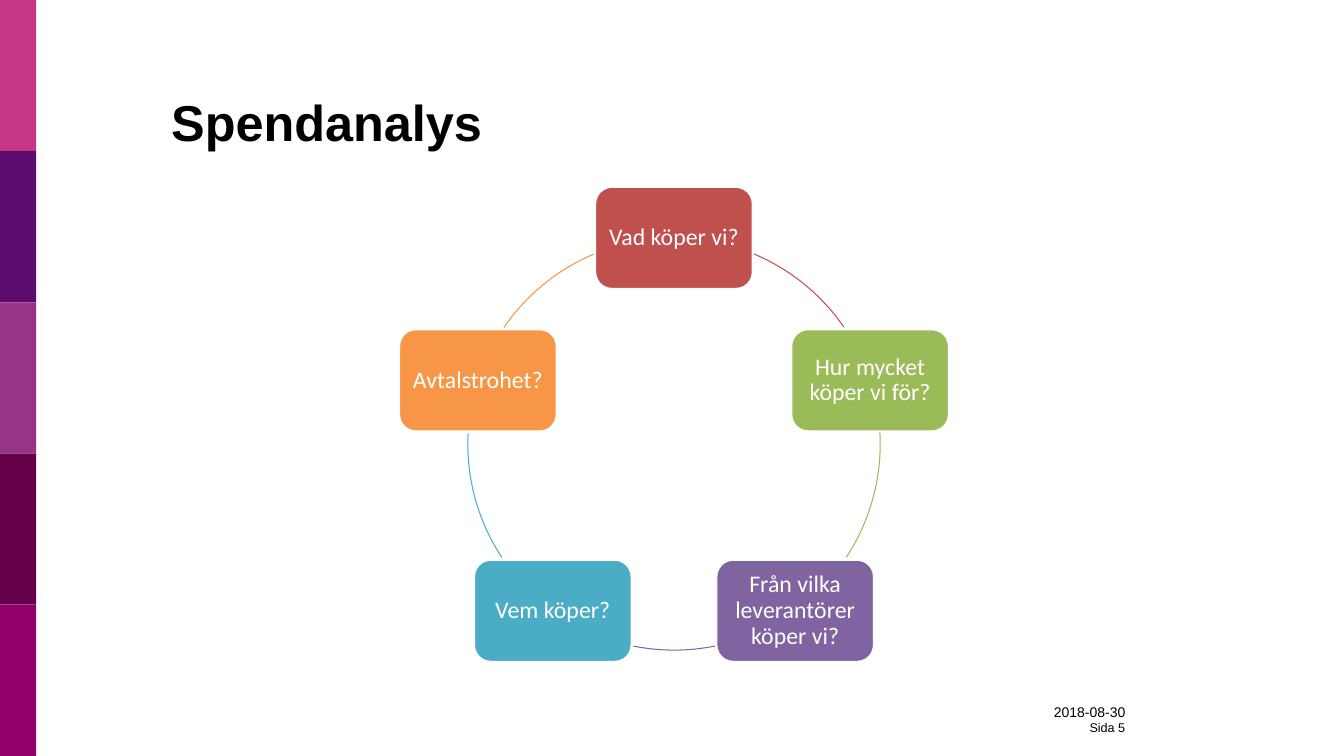
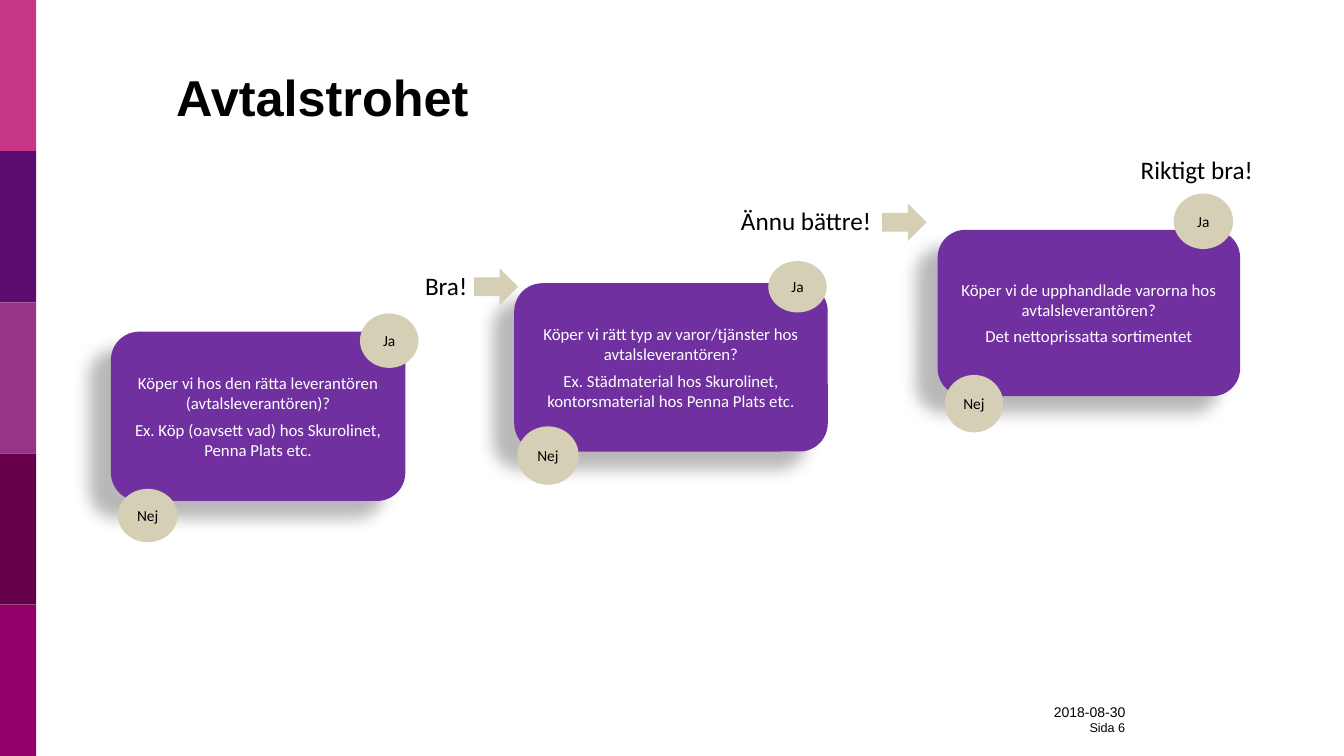
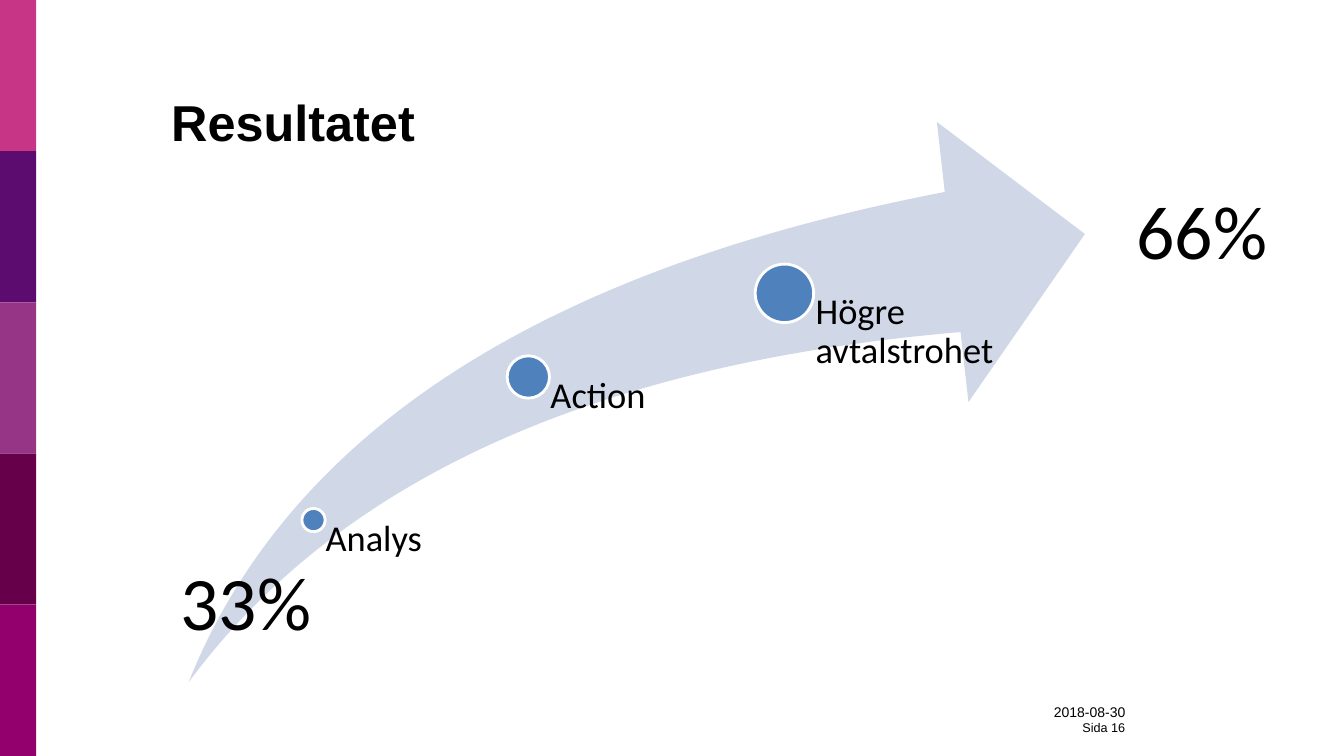
from math import cos, radians, sin

from lxml.etree import SubElement
from pptx import Presentation
from pptx.dml.color import RGBColor
from pptx.enum.shapes import MSO_SHAPE
from pptx.enum.text import MSO_ANCHOR, PP_ALIGN
from pptx.oxml.ns import qn
from pptx.util import Inches, Pt

BLACK = RGBColor(0x00, 0x00, 0x00)
WHITE = RGBColor(0xFF, 0xFF, 0xFF)
RED = RGBColor(0xC0, 0x50, 0x4D)
GREEN = RGBColor(0x9B, 0xBB, 0x59)
VIOLET = RGBColor(0x80, 0x64, 0xA2)
TEAL = RGBColor(0x4B, 0xAC, 0xC6)
ORANGE = RGBColor(0xF7, 0x96, 0x46)
PURPLE = RGBColor(0x70, 0x30, 0xA0)
SAND = RGBColor(0xD5, 0xD0, 0xB5)
PALE_BLUE = RGBColor(0xD0, 0xD8, 0xE8)
BLUE = RGBColor(0x4F, 0x81, 0xBD)
BANDS = [RGBColor(0xC7, 0x36, 0x86), RGBColor(0x5C, 0x0C, 0x6F), RGBColor(0x96, 0x34, 0x86),
         RGBColor(0x66, 0x00, 0x4B), RGBColor(0x93, 0x00, 0x6D)]

TITLE = {"name": "Arial", "size": Pt(36), "bold": True}
DATE = {"name": "Arial", "size": Pt(10)}
PAGE_NUMBER = {"name": "Arial", "size": Pt(9)}
CYCLE = {"name": "Calibri", "size": Pt(17)}
QUESTION = {"name": "Calibri", "size": Pt(12)}
ANSWER = {"name": "Calibri", "size": Pt(11)}
PRAISE = {"name": "Calibri", "size": Pt(18)}
STEP = {"name": "Calibri", "size": Pt(26)}
PERCENT = {"name": "Calibri", "size": Pt(54)}


def add_figure(page, kind, area, fill=None, line=None, line_width=2):
    figure = page.shapes.add_shape(kind, *[Inches(length) for length in area])
    figure.shadow.inherit = False
    if fill is None:
        figure.fill.background()
    else:
        figure.fill.solid()
        figure.fill.fore_color.rgb = fill
    if line is None:
        figure.line.fill.background()
    else:
        figure.line.color.rgb = line
        figure.line.width = Pt(line_width)
    return figure


def write(target, lines, colour=BLACK, align=PP_ALIGN.CENTER, anchor=MSO_ANCHOR.MIDDLE,
          insets=(0, 0, 0, 0), line_spacing=None, gap=0):
    """Fill a shape with (text, format) lines."""
    frame = target.text_frame
    frame.word_wrap = True
    frame.vertical_anchor = anchor
    for side, inset in zip(("left", "top", "right", "bottom"), insets):
        setattr(frame, f"margin_{side}", Inches(inset))
    for index, (text, font_format) in enumerate(lines):
        para = frame.add_paragraph() if index else frame.paragraphs[0]
        para.alignment = align
        if line_spacing:
            para.line_spacing = line_spacing
        if index and gap:
            para.space_before = Pt(gap)
        span = para.add_run()
        span.text = text
        span.font.color.rgb = colour
        for name, value in font_format.items():
            setattr(span.font, name, value)


deck = Presentation()
deck.slide_width = Inches(13.33)
deck.slide_height = Inches(7.5)

# Shared parts: side bands, title and footer
pages = []
for title, number, area in [
    ("Spendanalys", 5, (1.6, 0.3, 11.53, 1.25)),
    ("Avtalstrohet", 6, (1.65, 0.68, 7.54, 0.63)),
    ("Resultatet", 16, (1.6, 0.3, 11.53, 1.25)),
]:
    page = deck.slides.add_slide(deck.slide_layouts[6])
    for index, colour in enumerate(BANDS):
        add_figure(page, MSO_SHAPE.RECTANGLE, (0, 1.5 * index, 0.36, 1.5), colour)
    box = page.shapes.add_textbox(*[Inches(length) for length in area])
    write(box, [(title, TITLE)], align=PP_ALIGN.LEFT, anchor=MSO_ANCHOR.BOTTOM,
          insets=(0.1, 0.05, 0.1, 0.05))
    footer = page.shapes.add_textbox(Inches(9.78), Inches(6.95), Inches(1.38), Inches(0.37))
    write(footer, [("2018-08-30", DATE), (f"Sida {number}", PAGE_NUMBER)],
          align=PP_ALIGN.RIGHT, insets=(0, 0.05, 0, 0.05))
    pages.append(page)
cycle_page, loyalty_page, result_page = pages

# Spend analysis: five questions on a circle, joined by arcs (degrees clockwise from the right)
CENTRE_X, CENTRE_Y, RADIUS = 6.685, 4.405, 2.045
BOX_WIDTH, BOX_HEIGHT = 1.57, 1.02
questions = [
    ("Vad köper vi?", RED, 292.9, 325.6),
    ("Hur mycket köper vi för?", GREEN, 356.8, 33.4),
    ("Från vilka leverantörer köper vi?", VIOLET, 78.5, 101.5),
    ("Vem köper?", TEAL, 146.6, 183.2),
    ("Avtalstrohet?", ORANGE, 214.4, 247.1),
]
for index, (text, colour, start, end) in enumerate(questions):
    angle = radians(72 * index - 90)
    left = CENTRE_X + RADIUS * cos(angle) - BOX_WIDTH / 2
    top = CENTRE_Y + RADIUS * sin(angle) - BOX_HEIGHT / 2
    box = add_figure(cycle_page, MSO_SHAPE.ROUNDED_RECTANGLE, (left, top, BOX_WIDTH, BOX_HEIGHT),
                     colour, WHITE)
    write(box, [(text, CYCLE)], WHITE, insets=(0.07, 0.07, 0.07, 0.07), line_spacing=0.9)
    arc = add_figure(cycle_page, MSO_SHAPE.ARC,
                     (CENTRE_X - RADIUS, CENTRE_Y - RADIUS, 2 * RADIUS, 2 * RADIUS),
                     line=colour, line_width=0.75)
    arc.adjustments[0] = start * 0.6
    arc.adjustments[1] = end * 0.6

# Contract loyalty: three rising questions, each with its answers
steps = [
    ((1.1, 3.29, 2.92, 1.68), (1.17, 4.85, 0.59, 0.53), (3.57, 3.11, 0.58, 0.54),
     "Köper vi hos den rätta leverantören (avtalsleverantören)?",
     "Ex. Köp (oavsett vad) hos Skurolinet, Penna Plats etc."),
    ((5.1, 2.81, 3.11, 1.67), (5.13, 4.23, 0.61, 0.58), (7.62, 2.59, 0.58, 0.51),
     "Köper vi rätt typ av varor/tjänster hos avtalsleverantören?",
     "Ex. Städmaterial hos Skurolinet, kontorsmaterial hos Penna Plats etc."),
    ((9.3, 2.28, 3, 1.65), (9.37, 3.72, 0.58, 0.57), (11.64, 1.92, 0.59, 0.55),
     "Köper vi de upphandlade varorna hos avtalsleverantören?",
     "Det nettoprissatta sortimentet"),
]
for area, no_area, yes_area, question, example in steps:
    box = add_figure(loyalty_page, MSO_SHAPE.ROUNDED_RECTANGLE, area, PURPLE)
    effects = box._element.spPr.find(qn("a:effectLst"))
    shadow = SubElement(effects, qn("a:outerShdw"), blurRad="150000", dist="250000",
                        dir="8460000", algn="ctr", rotWithShape="0")
    shade = SubElement(shadow, qn("a:srgbClr"), val="000000")
    SubElement(shade, qn("a:alpha"), val="28000")
    write(box, [(question, QUESTION), (example, QUESTION)], WHITE, gap=4.5)
    for answer, answer_area in (("Nej", no_area), ("Ja", yes_area)):
        bubble = add_figure(loyalty_page, MSO_SHAPE.OVAL, answer_area, SAND)
        write(bubble, [(answer, ANSWER)], insets=(0.07, 0.04, 0.07, 0.04))

for left, top in [(4.7, 2.66), (8.75, 2.02)]:
    add_figure(loyalty_page, MSO_SHAPE.RIGHT_ARROW, (left, top, 0.44, 0.37), SAND)
for text, left, top, width in [("Bra!", 4.19, 2.68, 0.47), ("Ännu bättre!", 7.09, 2.04, 1.81),
                               ("Riktigt bra!", 10.92, 1.53, 1.9)]:
    box = loyalty_page.shapes.add_textbox(Inches(left), Inches(top), Inches(width), Inches(0.3))
    write(box, [(text, PRAISE)], anchor=MSO_ANCHOR.TOP)

# Result: growing dots along a rising arrow
swoosh = add_figure(result_page, MSO_SHAPE.SWOOSH_ARROW, (1.87, 1.21, 8.89, 5.56), PALE_BLUE)
swoosh.adjustments[0] = 0.25
swoosh.adjustments[1] = 0.25
for text, centre_x, centre_y, size, width, inset in [
    ("Analys", 3.11, 5.16, 0.23, 2.07, 0.12),
    ("Action", 5.24, 3.74, 0.42, 2.13, 0.22),
    ("Högre avtalstrohet", 7.78, 2.91, 0.58, 2.13, 0.31),
]:
    add_figure(result_page, MSO_SHAPE.OVAL,
               (centre_x - size / 2, centre_y - size / 2, size, size), BLUE, WHITE)
    label = result_page.shapes.add_textbox(Inches(centre_x), Inches(centre_y), Inches(width),
                                           Inches(6.77 - centre_y))
    write(label, [(text, STEP)], align=PP_ALIGN.LEFT, anchor=MSO_ANCHOR.TOP,
          insets=(inset, 0, 0, 0), line_spacing=0.9)
for text, left, top in [("33%", 1.36, 5.46), ("66%", 10.84, 1.78)]:
    box = result_page.shapes.add_textbox(Inches(left), Inches(top), Inches(2.16), Inches(1.01))
    write(box, [(text, PERCENT)], anchor=MSO_ANCHOR.TOP, insets=(0.1, 0.05, 0.1, 0.05))

deck.save("out.pptx")
